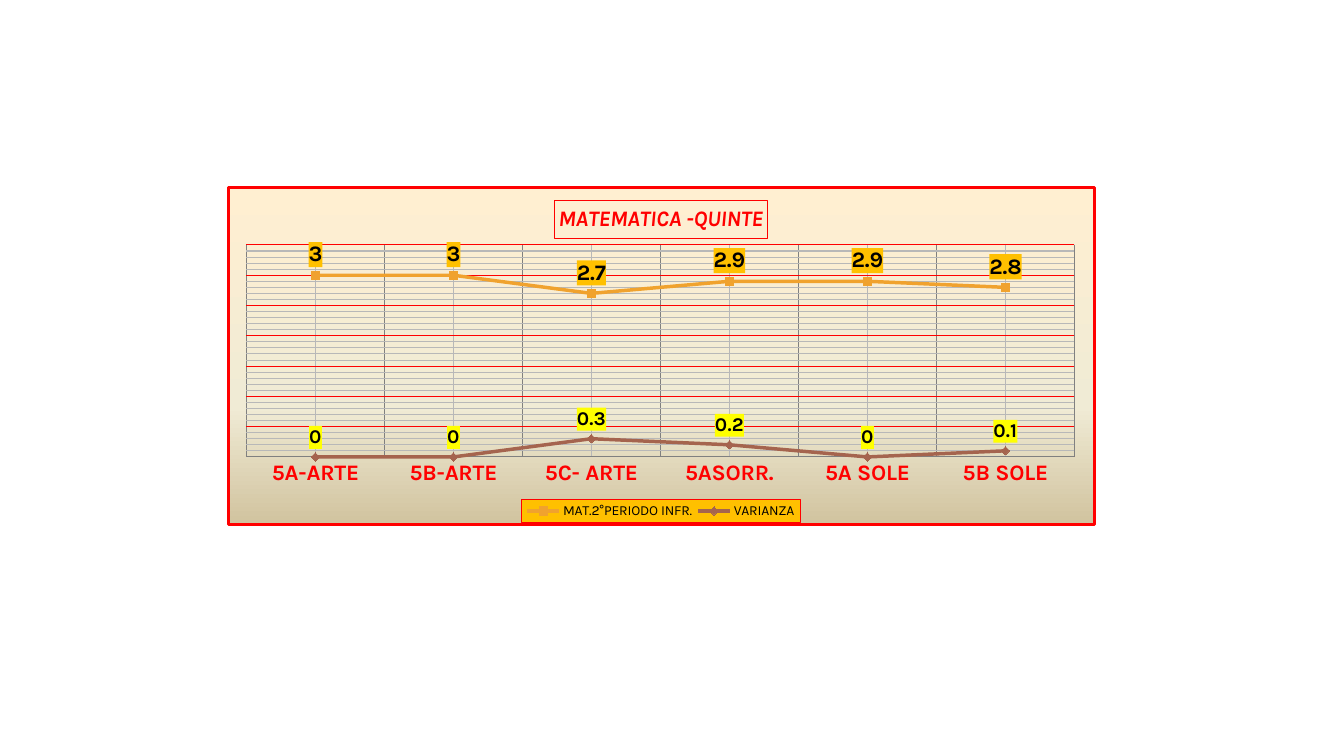
from pptx import Presentation
from pptx.chart.data import CategoryChartData
from pptx.dml.color import RGBColor
from pptx.enum import chart as ch
from pptx.oxml import parse_xml
from pptx.oxml.ns import nsdecls
from pptx.util import Pt

PX = 914400 / 100.8
RED = RGBColor(0xFF, 0x00, 0x00)
BLACK = RGBColor(0x00, 0x00, 0x00)
AMBER = RGBColor(0xFF, 0xC0, 0x00)
YELLOW = RGBColor(0xFF, 0xFF, 0x00)
ORANGE = RGBColor(0xF0, 0xA2, 0x2E)
BROWN = RGBColor(0xA5, 0x64, 0x4E)
GRAY = RGBColor(0x80, 0x80, 0x80)
SILVER = RGBColor(0xB8, 0xB8, 0xB8)
GRADIENT = [(0, RGBColor(0xFF, 0xEF, 0xD1)), (65, RGBColor(0xF0, 0xEB, 0xD5)),
            (100, RGBColor(0xD1, 0xC3, 0x9F))]
LEFT, TOP, WIDTH, HEIGHT = 227, 186, 869, 340


def add_format(insert, fill="", line=""):
    """Hand fill and line properties to the insert method of a chart element."""
    insert(parse_xml(f'<c:spPr {nsdecls("c", "a")}>{fill}{line}</c:spPr>'))


def place(before, x, y, w=0, h=0, inner=False):
    """Insert a manual layout, given in slide px, ahead of a chart element."""
    parts = [("xMode", "edge"), ("yMode", "edge"),
             ("x", round((x - LEFT) / WIDTH, 4)), ("y", round((y - TOP) / HEIGHT, 4))]
    if inner:
        parts.insert(0, ("layoutTarget", "inner"))
    if w:
        parts += [("w", round(w / WIDTH, 4)), ("h", round(h / HEIGHT, 4))]
    body = "".join(f'<c:{tag} val="{val}"/>' for tag, val in parts)
    before.addprevious(parse_xml(f'<c:layout {nsdecls("c")}><c:manualLayout>{body}'
                                 '</c:manualLayout></c:layout>'))


prs = Presentation()
prs.slide_width, prs.slide_height = round(1344 * PX), round(756 * PX)
s = prs.slides.add_slide(prs.slide_layouts[6])

# Data
data = CategoryChartData()
data.categories = ["5A-ARTE", "5B-ARTE", "5C- ARTE", "5ASORR.", "5A SOLE", "5B SOLE"]
data.add_series("MAT.2°PERIODO INFR.", [3, 3, 2.7, 2.9, 2.9, 2.8])
data.add_series("VARIANZA", [0, 0, 0.3, 0.2, 0, 0.1])
frame = s.shapes.add_chart(ch.XL_CHART_TYPE.LINE_MARKERS,
                           *[round(v * PX) for v in (LEFT, TOP, WIDTH, HEIGHT)], data)
chart = frame.chart
root = chart.element
chart.font.name, chart.font.size = "Karla", Pt(10)
chart.font.color.rgb = BLACK

# Title and legend
chart.has_title = True
title = chart.chart_title
title.text_frame.text = "MATEMATICA -QUINTE"
font = title.text_frame.paragraphs[0].runs[0].font
for name, value in {"name": "Karla", "size": Pt(16), "bold": True, "italic": True}.items():
    setattr(font, name, value)
font.color.rgb = RED
title.format.line.color.rgb = RED
title.format.line.width = Pt(0.75)
chart.has_legend = True
legend = chart.legend
legend.position = ch.XL_LEGEND_POSITION.BOTTOM
legend.include_in_layout = False
legend.font.size = Pt(10)

# Fill and line snippets
solid = '<a:solidFill><a:srgbClr val="{}"/></a:solidFill>'.format
outline = '<a:ln w="{}"><a:solidFill><a:srgbClr val="{}"/></a:solidFill></a:ln>'.format

# Axes and gridlines
cat, val = chart.category_axis, chart.value_axis
for name, value in {"minimum_scale": 0, "maximum_scale": 3.5, "major_unit": 0.5,
                    "minor_unit": 0.1, "visible": False}.items():
    setattr(val, name, value)
cat.major_tick_mark = ch.XL_TICK_MARK.NONE
cat.tick_labels.font.size = Pt(16)
cat.tick_labels.font.bold = True
cat.tick_labels.font.color.rgb = RED
cat.format.line.color.rgb = GRAY
for axis, major_color in ((cat, GRAY), (val, RED)):
    axis.has_major_gridlines = axis.has_minor_gridlines = True
    axis.major_gridlines.format.line.color.rgb = major_color
    axis.major_gridlines.format.line.width = Pt(0.75)
for minor in root.xpath(".//c:minorGridlines"):
    add_format(minor.append, line=outline(Pt(0.75), SILVER))

# Series with boxed labels
chart.plots[0].vary_by_categories = False
looks = [(ORANGE, ch.XL_MARKER_STYLE.SQUARE, 16, AMBER),
         (BROWN, ch.XL_MARKER_STYLE.DIAMOND, 14, YELLOW)]
for series, (color, marker, size, label_fill) in zip(chart.plots[0].series, looks):
    series.smooth = False
    series.format.line.color.rgb = color
    series.format.line.width = Pt(2.5)
    series.marker.style, series.marker.size = marker, 6
    series.marker.format.fill.solid()
    series.marker.format.fill.fore_color.rgb = color
    series.marker.format.line.color.rgb = color
    labels = series.data_labels
    labels.show_value = True
    labels.position = ch.XL_LABEL_POSITION.ABOVE
    labels.font.size, labels.font.bold = Pt(size), True
    labels.font.color.rgb = BLACK
for text, (*_, label_fill) in zip(root.xpath(".//c:ser/c:dLbls/c:txPr"), looks):
    add_format(text.addprevious, solid(label_fill))

# Chart and legend backgrounds
stops = "".join(f'<a:gs pos="{pos * 1000}"><a:srgbClr val="{color}"/></a:gs>'
                for pos, color in GRADIENT)
add_format(root.xpath("c:txPr")[0].addprevious,
           f'<a:gradFill><a:gsLst>{stops}</a:gsLst><a:lin ang="5400000" scaled="0"/></a:gradFill>',
           outline(Pt(2.25), RED))
add_format(root.xpath("c:chart/c:legend/c:txPr")[0].addprevious,
           solid(AMBER), outline(Pt(0.75), RED))

# Positions inside the chart
for layout in root.xpath(".//c:layout"):
    layout.getparent().remove(layout)
place(root.xpath("c:chart/c:title/c:overlay")[0], 554, 199)
place(root.xpath("c:chart/c:legend/c:overlay")[0], 521, 501, 280, 23)
place(root.xpath("c:chart/c:plotArea/*")[0], 245, 244, 831, 214, inner=True)

prs.save("out.pptx")
